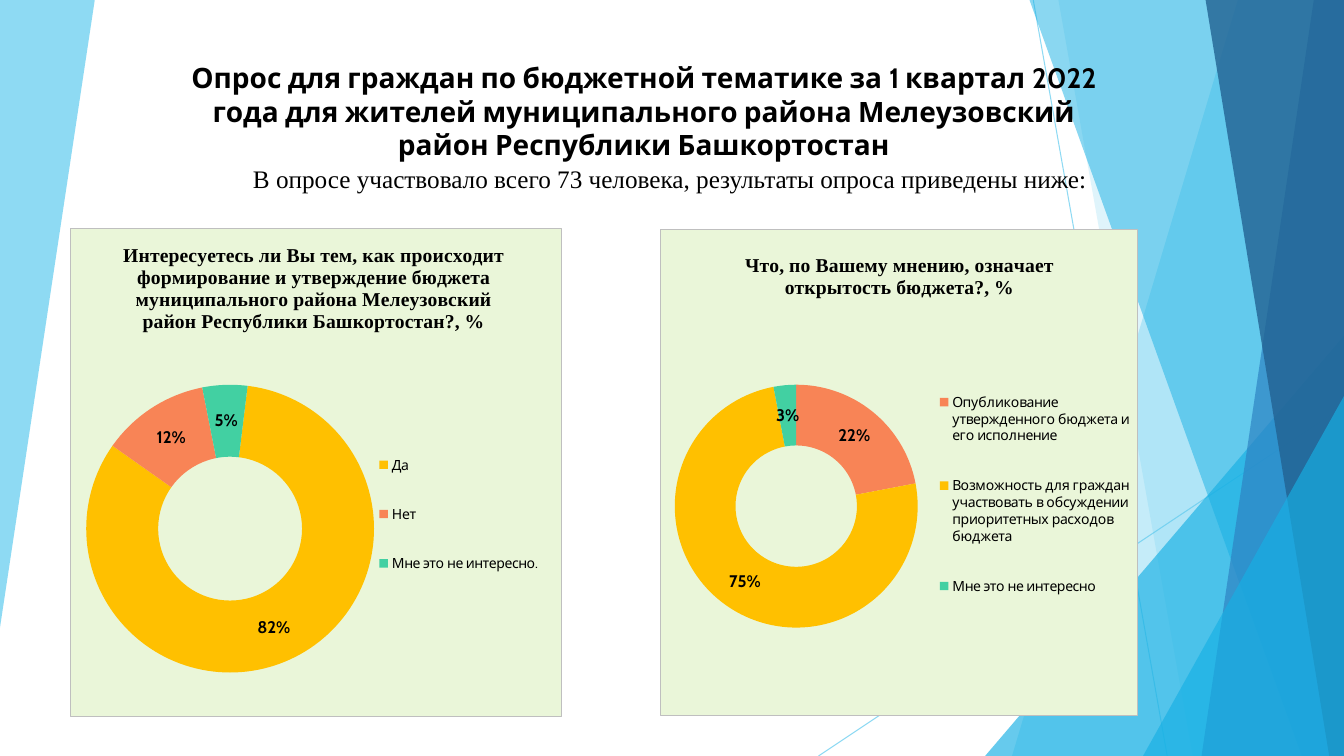
from lxml import etree
from pptx import Presentation
from pptx.chart.data import CategoryChartData
from pptx.dml.color import RGBColor
from pptx.enum.chart import XL_CHART_TYPE, XL_LEGEND_POSITION
from pptx.enum.shapes import MSO_CONNECTOR, MSO_SHAPE
from pptx.enum.text import MSO_ANCHOR, MSO_AUTO_SIZE, PP_ALIGN
from pptx.oxml import parse_xml
from pptx.oxml.ns import nsdecls, qn
from pptx.util import Inches, Pt

DOUGHNUT = XL_CHART_TYPE.DOUGHNUT
LEGEND_RIGHT = XL_LEGEND_POSITION.RIGHT
STRAIGHT = MSO_CONNECTOR.STRAIGHT
TRIANGLE = MSO_SHAPE.ISOSCELES_TRIANGLE
BOTTOM = MSO_ANCHOR.BOTTOM
NO_AUTOFIT = MSO_AUTO_SIZE.NONE
CENTER = PP_ALIGN.CENTER

WIDTH, HEIGHT = Inches(13.33), Inches(7.5)
HEADING_FONT, BODY_FONT = "Cabin", "Times New Roman"

BLACK = RGBColor(0x00, 0x00, 0x00)
SKY = RGBColor(0x5F, 0xCB, 0xEF)
CYAN = RGBColor(0x17, 0xB0, 0xE4)
BLUE = RGBColor(0x2E, 0x83, 0xC3)
NAVY = RGBColor(0x22, 0x62, 0x92)
YELLOW = RGBColor(0xFF, 0xC0, 0x00)
ORANGE = RGBColor(0xF8, 0x84, 0x56)
GREEN = RGBColor(0x42, 0xD0, 0xA2)
PANEL = RGBColor(0xEA, 0xF6, 0xD9)
PANEL_BORDER = RGBColor(0xBF, 0xBF, 0xBF)


def point(x, y):
    """Turn percentages of the slide's size into lengths."""
    return round(WIDTH * x / 100), round(HEIGHT * y / 100)


def area(box):
    left, top, width, height = box
    return *point(left, top), *point(width, height)


def set_opacity(shape, percent):
    for color in shape._element.spPr.iter(qn("a:srgbClr")):
        etree.SubElement(color, qn("a:alpha")).set("val", str(percent * 1000))


def paint(shape, color, opacity):
    shape.shadow.inherit = False
    shape.fill.solid()
    shape.fill.fore_color.rgb = color
    shape.line.fill.background()
    set_opacity(shape, opacity)


def add_facet(page, corners, color, opacity):
    first, *others = [point(*corner) for corner in corners]
    builder = page.shapes.build_freeform(*first)
    builder.add_line_segments(others, close=True)
    paint(builder.convert_to_shape(), color, opacity)


def add_corner_triangle(page, left, top):
    """Fill the slide's lower right corner with a right triangle."""
    box = (left, top, 100 - left, 100 - top)
    triangle = page.shapes.add_shape(TRIANGLE, *area(box))
    triangle.adjustments[0] = 1
    paint(triangle, CYAN, 66)


def add_thin_line(page, start, end):
    line = page.shapes.add_connector(STRAIGHT, *point(*start), *point(*end))
    line.line.color.rgb = SKY
    line.line.width = Pt(0.75)
    set_opacity(line, 70)
    etree.SubElement(line._element.spPr, qn("a:effectLst"))


def add_right_facet(page, top_x, bottom_x, color, opacity):
    """Fill from a slanted edge to the slide's right side."""
    corners = [(top_x, 0), (100, 0), (100, 100), (bottom_x, 100)]
    add_facet(page, corners, color, opacity)


def add_backdrop(page):
    add_facet(page, [(0, 0), (7.05, 0), (0, 83)], SKY, 70)
    add_thin_line(page, (76.88, 0), (86.85, 100))
    add_thin_line(page, (100, 53.7), (60.9, 100))
    add_right_facet(page, 92.1, 75.3, SKY, 36)
    add_right_facet(page, 78.75, 88.75, SKY, 20)
    add_corner_triangle(page, 73.3, 44.4)
    add_right_facet(page, 76.6, 96.85, CYAN, 50)
    add_right_facet(page, 97.75, 89.4, BLUE, 70)
    add_right_facet(page, 89.7, 98.9, NAVY, 80)
    add_corner_triangle(page, 85.05, 52.4)


def style_font(font, name, size, bold=False):
    font.name = name
    font.size = Pt(size)
    font.bold = bold
    font.color.rgb = BLACK


def write_centered(frame, text, font_name, size, bold=False):
    frame.word_wrap = True
    para = frame.paragraphs[0]
    para.text = text
    para.alignment = CENTER
    style_font(para.runs[0].font, font_name, size, bold)


def add_title(page, box, text):
    title = page.shapes.title
    title.left, title.top, title.width, title.height = area(box)
    title.text_frame.auto_size = NO_AUTOFIT
    title.text_frame.vertical_anchor = BOTTOM
    write_centered(title.text_frame, text, HEADING_FONT, 20, True)
    page.shapes._spTree.append(title._element)


def add_summary(page, box, text):
    summary = page.shapes.add_textbox(*area(box))
    write_centered(summary.text_frame, text, BODY_FONT, 18)


def set_layout(part, place, after=None):
    """Fix a chart part at x, y and optionally w, h, as shares of the chart."""
    for old in part.findall(qn("c:layout")):
        part.remove(old)
    layout = etree.Element(qn("c:layout"))
    manual = etree.SubElement(layout, qn("c:manualLayout"))
    if after is None:
        etree.SubElement(manual, qn("c:layoutTarget")).set("val", "inner")
    for mode in ("xMode", "yMode"):
        etree.SubElement(manual, qn(f"c:{mode}")).set("val", "edge")
    for name, share in zip("xywh", place):
        etree.SubElement(manual, qn(f"c:{name}")).set("val", str(share))
    if after is None:
        part.insert(0, layout)
    else:
        part.find(qn(after)).addnext(layout)


def add_panel(chart_space):
    panel = parse_xml(
        f'<c:spPr {nsdecls("c", "a")}>'
        f'<a:solidFill><a:srgbClr val="{PANEL}"/></a:solidFill>'
        f'<a:ln w="{Pt(0.75)}"><a:solidFill><a:srgbClr val="{PANEL_BORDER}"/>'
        "</a:solidFill></a:ln></c:spPr>"
    )
    chart_space.find(qn("c:chart")).addnext(panel)


def add_survey_chart(page, box, question, answers, places, start_angle=0):
    data = CategoryChartData(number_format='0"%"')
    data.categories = [answer for answer, _, _ in answers]
    data.add_series("Series 1", [share for _, share, _ in answers])
    chart = page.shapes.add_chart(DOUGHNUT, *area(box), data).chart
    style_font(chart.font, HEADING_FONT, 10)
    add_panel(chart._chartSpace)

    chart.has_title = True
    write_centered(chart.chart_title.text_frame, question, BODY_FONT, 14, True)
    chart.has_legend = True
    chart.legend.position = LEGEND_RIGHT
    chart.legend.include_in_layout = False

    plot = chart.plots[0]
    plot.vary_by_categories = True
    plot.has_data_labels = True
    labels = plot.data_labels
    labels.show_value = True
    labels.show_percentage = False
    labels.number_format = '0"%"'
    labels.number_format_is_linked = False
    style_font(labels.font, HEADING_FONT, 12, True)
    for index, (_, _, color) in enumerate(answers):
        fill = plot.series[0].points[index].format.fill
        fill.solid()
        fill.fore_color.rgb = color
    ring = chart._chartSpace.find(".//" + qn("c:doughnutChart"))
    ring.find(qn("c:firstSliceAng")).set("val", str(start_angle))

    title_place, ring_place, legend_place = places
    set_layout(chart.chart_title._element, title_place, "c:tx")
    set_layout(ring.getparent(), ring_place)
    set_layout(chart.legend._element, legend_place, "c:legendPos")


def main():
    deck = Presentation()
    deck.slide_width, deck.slide_height = WIDTH, HEIGHT
    page = deck.slides.add_slide(deck.slide_layouts[0])
    subtitle = page.placeholders[1]._element
    subtitle.getparent().remove(subtitle)

    add_backdrop(page)
    add_title(page, (11.78, 7.87, 72.24, 14.13),
              "Опрос для граждан по бюджетной тематике за 1 квартал 2022 года для жителей "
              "муниципального района Мелеузовский район Республики Башкортостан")
    add_summary(page, (14.4, 20.93, 70.9, 5.33),
                "В опросе участвовало всего 73 человека, результаты опроса приведены ниже:")
    add_survey_chart(
        page, (49.1, 30.27, 35.55, 64.4),
        "Что, по Вашему мнению, означает открытость бюджета?, %",
        [("Опубликование утвержденного бюджета и его исполнение", 22, ORANGE),
         ("Возможность для граждан участвовать в обсуждении приоритетных расходов бюджета",
          75, YELLOW),
         ("Мне это не интересно", 3, GREEN)],
        [(0.17, 0.04), (0.03, 0.32, 0.51, 0.5), (0.58, 0.27, 0.41, 0.55)])
    add_survey_chart(
        page, (5.2, 30.2, 36.65, 64.65),
        "Интересуетесь ли Вы тем, как происходит формирование и утверждение бюджета "
        "муниципального района Мелеузовский район Республики Башкортостан?, %",
        [("Да", 82, YELLOW), ("Нет", 12, ORANGE), ("Мне это не интересно.", 5, GREEN)],
        [(0.1, 0.02), (0.03, 0.32, 0.59, 0.59), (0.61, 0.4, 0.36, 0.37)], 7)
    deck.save("out.pptx")


if __name__ == "__main__":
    main()
